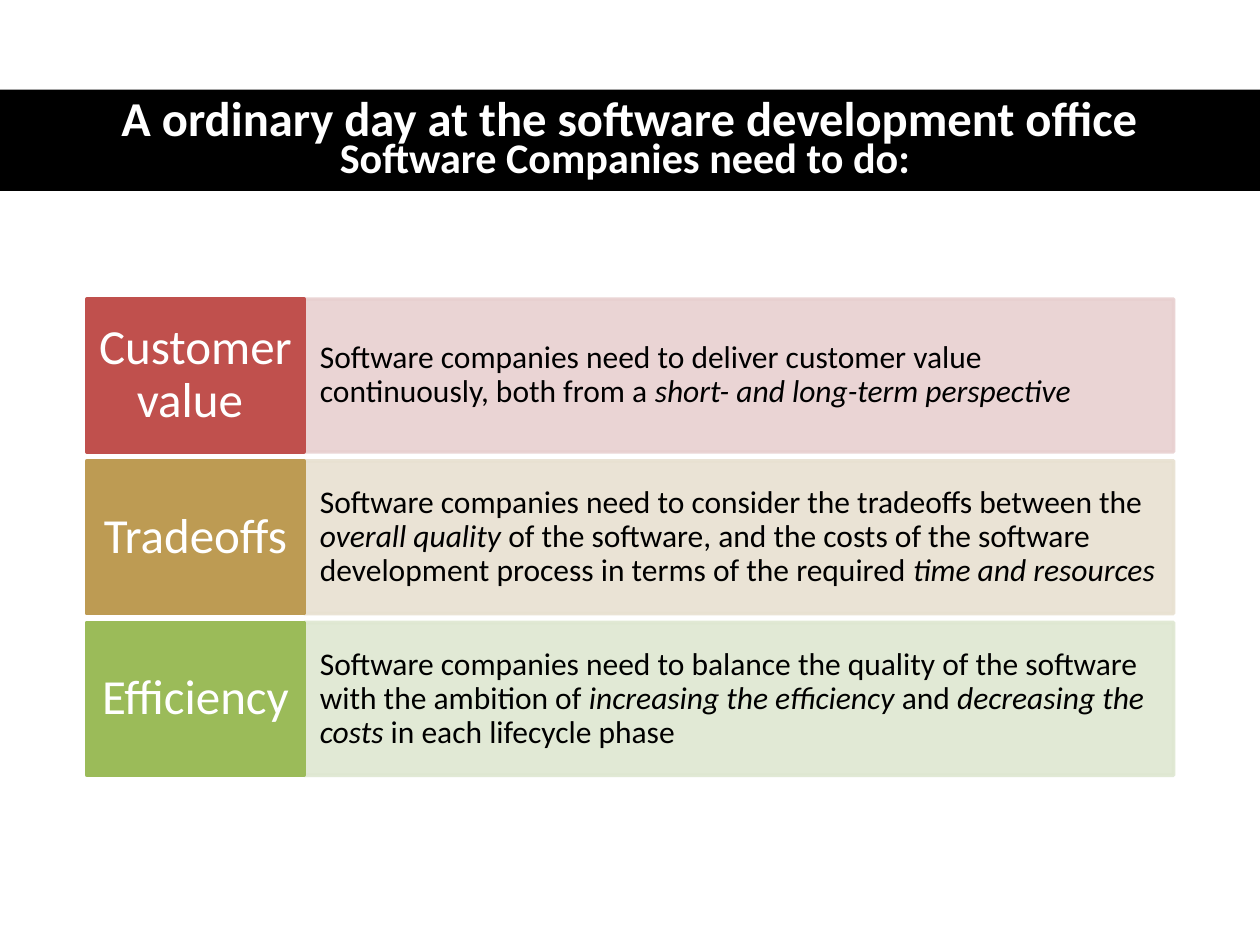
from lxml import etree
from pptx import Presentation
from pptx.dml.color import RGBColor
from pptx.enum.shapes import MSO_SHAPE
from pptx.enum.text import MSO_ANCHOR, MSO_AUTO_SIZE, PP_ALIGN
from pptx.oxml.ns import qn
from pptx.util import Cm, Pt

RECTANGLE = MSO_SHAPE.RECTANGLE
MIDDLE = MSO_ANCHOR.MIDDLE
NO_FIT = MSO_AUTO_SIZE.NONE
CENTER, LEFT = PP_ALIGN.CENTER, PP_ALIGN.LEFT

BLACK = RGBColor(0x00, 0x00, 0x00)
WHITE = RGBColor(0xFF, 0xFF, 0xFF)
RED, PALE_RED = RGBColor(0xC0, 0x50, 0x4D), RGBColor(0xE8, 0xD0, 0xD0)
GOLD, PALE_GOLD = RGBColor(0xBD, 0x9B, 0x53), RGBColor(0xE8, 0xE1, 0xD1)
GREEN, PALE_GREEN = RGBColor(0x9B, 0xBB, 0x59), RGBColor(0xDE, 0xE7, 0xD1)

SLIDE_WIDTH, SLIDE_HEIGHT = Cm(25.4), Cm(19.05)
ROWS_TOP, ROW_HEIGHT, ROW_PITCH = Cm(6.03), Cm(3.08), Cm(3.26)
LABEL_LEFT, LABEL_WIDTH = Cm(1.75), Cm(4.38)
DETAIL_LEFT, DETAIL_WIDTH = LABEL_LEFT + LABEL_WIDTH, Cm(17.53)

FRAME_FORMAT = {"word_wrap": True, "auto_size": NO_FIT, "vertical_anchor": MIDDLE}
LABEL_FRAME = FRAME_FORMAT | {
    "margin_left": Cm(0.23), "margin_right": Cm(0.23),
    "margin_top": Cm(0.3), "margin_bottom": Cm(0.3)}
DETAIL_FRAME = FRAME_FORMAT | {
    "margin_left": Cm(0.32), "margin_right": Cm(0.32),
    "margin_top": Cm(0.79), "margin_bottom": Cm(0.79)}
LABEL_PARA = {"alignment": CENTER, "line_spacing": 0.9}
DETAIL_PARA = {"alignment": LEFT, "line_spacing": 0.9}
TITLE_PARA = {"alignment": CENTER, "line_spacing": 0.7, "space_after": Pt(6)}
LABEL_FONT = {"name": "Calibri", "size": Pt(28)}
DETAIL_FONT = {"name": "Calibri", "size": Pt(18)}
TITLE_FONT = {"name": "Calibri", "bold": True}

TITLE_LINES = [
    ("A ordinary day at the software development office", 27.8),
    ("Software Companies need to do: ", 24.1),
]
# Each detail alternates upright and italic spans.
ROWS = [
    ("Customer value ", RED, PALE_RED, [
        "Software companies need to deliver customer value continuously, both from a ",
        "short- and long-term perspective"]),
    ("Tradeoffs", GOLD, PALE_GOLD, [
        "Software companies need to consider the tradeoffs between the ",
        "overall quality ",
        "of the software, and the costs of the software development process "
        "in terms of the required ",
        "time and resources"]),
    ("Efficiency", GREEN, PALE_GREEN, [
        "Software companies need to balance the quality of the software "
        "with the ambition of ",
        "increasing the efficiency ",
        "and ",
        "decreasing the costs",
        " in each lifecycle phase"]),
]


def apply_format(target, values):
    """Set every attribute named in values on the target."""
    for name, value in values.items():
        setattr(target, name, value)


def add_span(para, text, color, values):
    """Append a formatted run of text to a paragraph."""
    span = para.add_run()
    span.text = text
    span.font.color.rgb = color
    apply_format(span.font, values)


def add_box(slide, left, top, width, height, color):
    """Add a rectangle whose fill and outline share one colour."""
    box = slide.shapes.add_shape(RECTANGLE, left, top, width, height)
    box.shadow.inherit = False
    box.fill.solid()
    box.fill.fore_color.rgb = color
    box.line.color.rgb = color
    box.line.width = Pt(2)
    return box


def make_translucent(box, percent):
    """Give the fill and outline of a box the same opacity."""
    for color in box.element.spPr.iter(qn("a:srgbClr")):
        etree.SubElement(color, qn("a:alpha"), val=str(percent * 1000))


def add_title(slide):
    """Place the two-line title on a black band."""
    title = slide.shapes.title
    apply_format(title, {"left": Cm(1.75), "top": Cm(1.88),
                         "width": Cm(21.9), "height": Cm(1.98)})
    apply_format(title.text_frame, FRAME_FORMAT)
    para = title.text_frame.paragraphs[0]
    apply_format(para, TITLE_PARA)
    for index, (text, size) in enumerate(TITLE_LINES):
        if index:
            para.add_line_break()
        add_span(para, text, WHITE, TITLE_FONT | {"size": Pt(size)})
    band = add_box(slide, 0, Cm(1.81), SLIDE_WIDTH, Cm(2.04), BLACK)
    band.line.fill.background()
    title.element.addprevious(band.element)


def add_row(slide, top, label, color, pale_color, detail):
    """Add a coloured label with its pale detail panel."""
    panel = add_box(slide, DETAIL_LEFT, top, DETAIL_WIDTH, ROW_HEIGHT, pale_color)
    make_translucent(panel, 90)
    apply_format(panel.text_frame, DETAIL_FRAME)
    para = panel.text_frame.paragraphs[0]
    apply_format(para, DETAIL_PARA)
    for index, text in enumerate(detail):
        add_span(para, text, BLACK, DETAIL_FONT | {"italic": index % 2 == 1})

    box = add_box(slide, LABEL_LEFT, top, LABEL_WIDTH, ROW_HEIGHT, color)
    apply_format(box.text_frame, LABEL_FRAME)
    para = box.text_frame.paragraphs[0]
    apply_format(para, LABEL_PARA)
    add_span(para, label, WHITE, LABEL_FONT)


def main():
    """Build the slide and save the deck."""
    deck = Presentation()
    deck.slide_width, deck.slide_height = SLIDE_WIDTH, SLIDE_HEIGHT
    slide = deck.slides.add_slide(deck.slide_layouts.get_by_name("Title Only"))
    add_title(slide)
    for index, row in enumerate(ROWS):
        add_row(slide, ROWS_TOP + index * ROW_PITCH, *row)
    deck.save("out.pptx")


if __name__ == "__main__":
    main()
